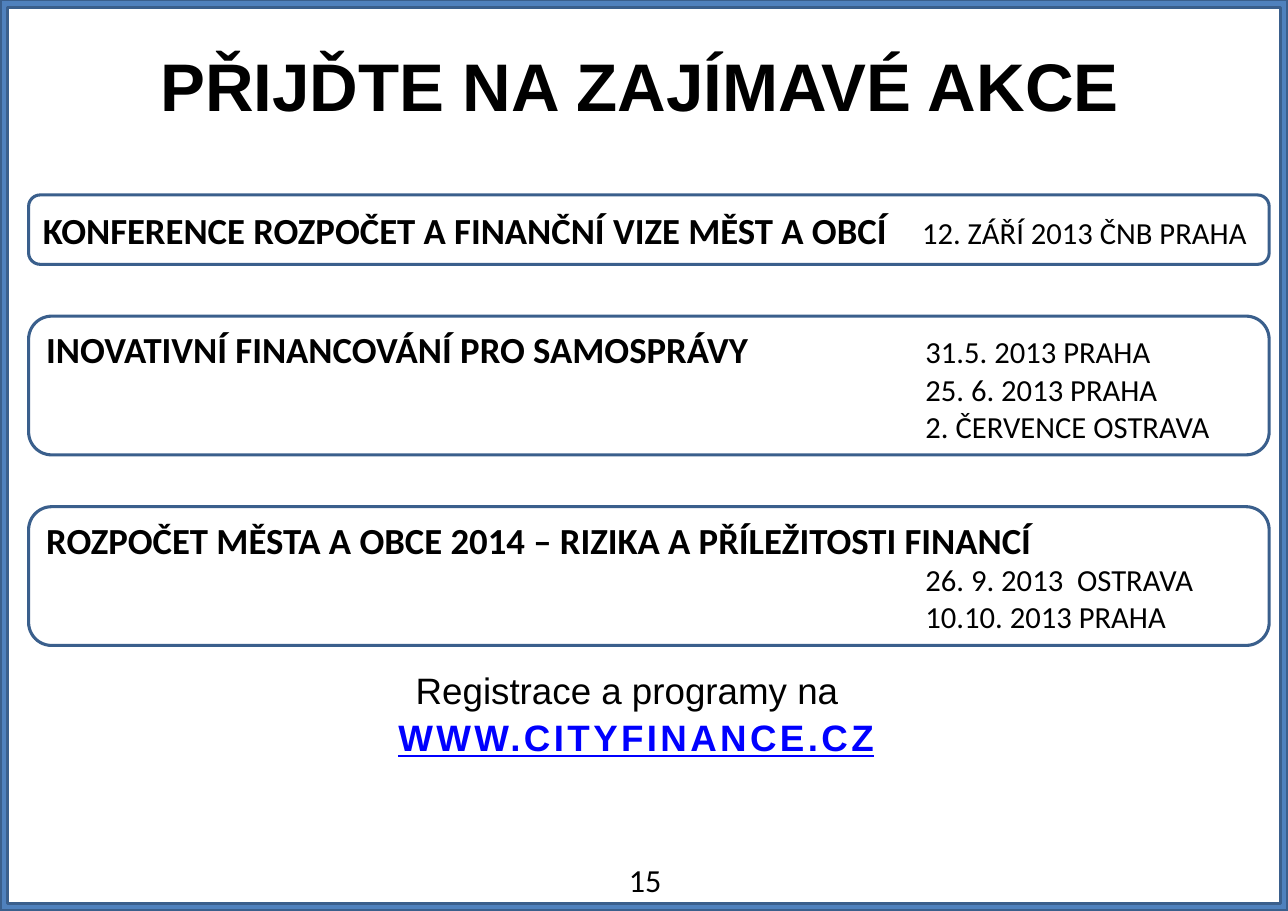
from dataclasses import dataclass

from lxml.etree import SubElement
from pptx import Presentation
from pptx.dml.color import RGBColor
from pptx.enum.shapes import MSO_SHAPE
from pptx.enum.text import MSO_ANCHOR, PP_ALIGN
from pptx.oxml.ns import qn
from pptx.util import Emu, Pt


@dataclass(frozen=True)
class Theme:
    ink: RGBColor = RGBColor(0x00, 0x00, 0x00)
    frame: RGBColor = RGBColor(0x4F, 0x81, 0xBD)
    border: RGBColor = RGBColor(0x3A, 0x5F, 0x8C)
    link: RGBColor = RGBColor(0x00, 0x00, 0xFF)
    display: str = "Arial"
    body: str = "Calibri"
    title_size: int = 44
    heading_size: int = 24
    date_size: int = 20
    number_size: int = 21
    border_width: int = 2


THEME = Theme()
WIDTH, HEIGHT = 1169, 827
DATE_TAB = 798

# Each event: heading, date beside the heading, dates on lines of their own
EVENTS = [
    ("KONFERENCE ROZPOČET A FINANČNÍ VIZE MĚST A OBCÍ",
     "12. ZÁŘÍ 2013 ČNB PRAHA", []),
    ("INOVATIVNÍ FINANCOVÁNÍ PRO SAMOSPRÁVY",
     "31.5. 2013 PRAHA", ["25. 6. 2013 PRAHA", "2. ČERVENCE OSTRAVA"]),
    ("ROZPOČET MĚSTA A OBCE 2014 – RIZIKA A PŘÍLEŽITOSTI FINANCÍ",
     None, ["26. 9. 2013  OSTRAVA", "10.10. 2013 PRAHA"]),
]


def px(n):
    """Turn px, 100 to the inch, into EMU."""
    return Emu(n * 9144)


def add_run(p, text, size, font=THEME.body, color=THEME.ink, bold=False):
    r = p.add_run()
    r.text = text
    r.font.size = Pt(size)
    r.font.name = font
    r.font.color.rgb = color
    r.font.bold = bold
    return r


def add_text_box(slide, box, inset=True):
    tf = slide.shapes.add_textbox(*map(px, box)).text_frame
    tf.word_wrap = True
    if not inset:
        tf.margin_left = tf.margin_top = tf.margin_right = tf.margin_bottom = 0
    return tf


def add_outlined(slide, preset, box):
    sp = slide.shapes.add_shape(preset, *map(px, box))
    sp.shadow.inherit = False
    sp.line.color.rgb = THEME.border
    sp.line.width = Pt(THEME.border_width)
    return sp


def add_frame(slide, box):
    sp = add_outlined(slide, MSO_SHAPE.FRAME, box)
    sp.adjustments[0] = 0.008
    sp.fill.solid()
    sp.fill.fore_color.rgb = THEME.frame


def add_title(slide, box, text):
    tf = add_text_box(slide, box, inset=False)
    tf.vertical_anchor = MSO_ANCHOR.MIDDLE
    p = tf.paragraphs[0]
    p.alignment = PP_ALIGN.CENTER
    add_run(p, text, THEME.title_size, THEME.display, bold=True)


def set_date_tab(p):
    tabs = SubElement(p._p.get_or_add_pPr(), qn("a:tabLst"))
    SubElement(tabs, qn("a:tab"), pos=str(px(DATE_TAB)), algn="l")


def add_event(slide, box, heading, first_date, more_dates):
    sp = add_outlined(slide, MSO_SHAPE.ROUNDED_RECTANGLE, box)
    sp.fill.background()
    tf = sp.text_frame
    tf.word_wrap = True
    tf.vertical_anchor = MSO_ANCHOR.MIDDLE
    p = tf.paragraphs[0]
    p.alignment = PP_ALIGN.LEFT
    add_run(p, heading, THEME.heading_size, bold=True)
    if first_date:
        set_date_tab(p)
        add_run(p, "\t" + first_date, THEME.date_size)
    for date in more_dates:
        p = tf.add_paragraph()
        p.alignment = PP_ALIGN.LEFT
        set_date_tab(p)
        add_run(p, "\t" + date, THEME.date_size)


def add_events(slide, box, events, gap):
    """Stack the events; those with extra date lines are twice as tall."""
    left, top, width, row = box
    for heading, first_date, more_dates in events:
        height = row * 2 if more_dates else row
        add_event(slide, (left, top, width, height),
                  heading, first_date, more_dates)
        top += height + gap


def add_registration(slide, box, invitation, address):
    tf = add_text_box(slide, box, inset=False)
    first, second = tf.paragraphs[0], tf.add_paragraph()
    for p in (first, second):
        p.alignment = PP_ALIGN.CENTER
        p.line_spacing = Pt(26)
    second.space_before = Pt(5)
    second._p.get_or_add_pPr().set("marL", str(px(17)))
    add_run(first, invitation, THEME.heading_size, THEME.display)
    r = add_run(second, address, THEME.heading_size, THEME.display,
                THEME.link, bold=True)
    r.font.underline = True
    r._r.get_or_add_rPr().set("spc", "220")


def add_page_number(slide, box, number):
    tf = add_text_box(slide, box)
    add_run(tf.paragraphs[0], number, THEME.number_size)


def main():
    prs = Presentation()
    prs.slide_width, prs.slide_height = px(WIDTH), px(HEIGHT)
    slide = prs.slides.add_slide(prs.slide_layouts[6])
    add_frame(slide, (0, 0, WIDTH, HEIGHT))
    add_title(slide, (18, 20, 1126, 114), "PŘIJĎTE NA ZAJÍMAVÉ AKCE")
    add_page_number(slide, (561, 776, 57, 27), "15")
    add_registration(slide, (57, 610, 1024, 118),
                     "Registrace a programy na", "WWW.CITYFINANCE.CZ")
    add_events(slide, (26, 177, 1126, 63), EVENTS, gap=47)
    prs.save("out.pptx")


if __name__ == "__main__":
    main()
